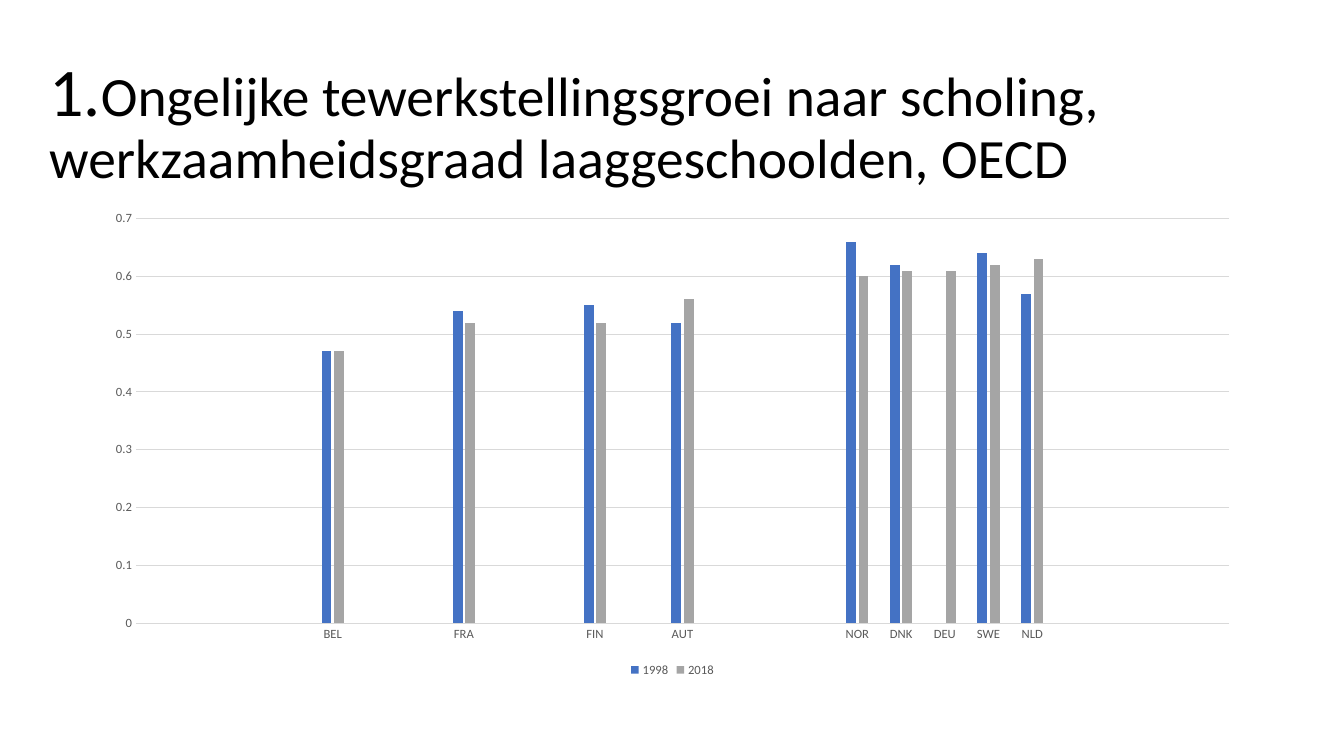
from pptx import Presentation
from pptx.chart.data import CategoryChartData
from pptx.dml.color import RGBColor
from pptx.enum.chart import XL_CHART_TYPE, XL_LEGEND_POSITION, XL_TICK_MARK
from pptx.enum.text import MSO_ANCHOR
from pptx.util import Inches, Pt

COLUMNS = XL_CHART_TYPE.COLUMN_CLUSTERED
BOTTOM = XL_LEGEND_POSITION.BOTTOM
NO_TICK = XL_TICK_MARK.NONE
MIDDLE = MSO_ANCHOR.MIDDLE

FONT = "Calibri"
COLORS = {"text": "000000", "label": "595959", "grid": "D9D9D9",
          "1998": "4472C4", "2018": "A5A5A5"}
WIDE, HIGH = 13.33, 7.5
SLOTS = 25
RATES = {
    4: ("BEL", 0.47, 0.47), 7: ("FRA", 0.54, 0.52),
    10: ("FIN", 0.55, 0.52), 12: ("AUT", 0.52, 0.56),
    16: ("NOR", 0.66, 0.6), 17: ("DNK", 0.62, 0.61),
    18: ("DEU", None, 0.61), 19: ("SWE", 0.64, 0.62),
    20: ("NLD", 0.57, 0.63),
}


def tint(name):
    """Return the named colour."""
    return RGBColor.from_string(COLORS[name])


def style(font, size, color):
    """Set face, size and colour of a font."""
    font.name, font.size = FONT, Pt(size)
    font.color.rgb = tint(color)


def rule(line):
    """Give a chart line its thin grey look."""
    line.color.rgb = tint("grid")
    line.width = Pt(0.75)


def write(slide, box, runs, color="text", space=0.9, anchor=MIDDLE):
    """Write one paragraph of (text, size) runs into a box."""
    frame = slide.shapes.add_textbox(*box).text_frame
    frame.word_wrap = True
    frame.vertical_anchor = anchor
    para = frame.paragraphs[0]
    para.line_spacing = space
    for text, size in runs:
        run = para.add_run()
        run.text = text
        style(run.font, size, color)


def plot(slide, box):
    """Draw the employment rates per country as paired columns."""
    rows = [RATES.get(slot, ("", None, None)) for slot in range(SLOTS)]
    names, old, new = zip(*rows)
    data = CategoryChartData()
    data.categories = names
    data.add_series("1998", old)
    data.add_series("2018", new)
    chart = slide.shapes.add_chart(COLUMNS, *box, data).chart
    chart.has_title = False
    style(chart.font, 10, "text")

    bars = chart.plots[0]
    bars.gap_width, bars.overlap = 219, -27
    bars.vary_by_categories = False
    for series in bars.series:
        series.format.fill.solid()
        series.format.fill.fore_color.rgb = tint(series.name)
        series.invert_if_negative = False

    for axis in (chart.category_axis, chart.value_axis):
        axis.major_tick_mark = axis.minor_tick_mark = NO_TICK
        style(axis.tick_labels.font, 9, "label")
    rule(chart.category_axis.format.line)
    rates = chart.value_axis
    rates.minimum_scale, rates.maximum_scale, rates.major_unit = 0, 0.7, 0.1
    rates.format.line.fill.background()
    rule(rates.major_gridlines.format.line)

    chart.has_legend = True
    chart.legend.position = BOTTOM
    chart.legend.include_in_layout = False
    style(chart.legend.font, 9, "label")


def place(*sides):
    """Turn a box in inches into slide lengths."""
    return [Inches(side) for side in sides]


def main():
    """Build and save the slide."""
    deck = Presentation()
    deck.slide_width, deck.slide_height = place(WIDE, HIGH)
    slide = deck.slides.add_slide(deck.slide_layouts[6])
    write(slide, place(0.39, 0.61, 12.84, 1.24), [
        ("1.", 48.6),
        ("Ongelijke tewerkstellingsgroei naar scholing, "
         "werkzaamheidsgraad laaggeschoolden, OECD", 39.6)])
    plot(slide, place(0.92, 2, 11.5, 4.76))
    deck.save("out.pptx")


if __name__ == "__main__":
    main()
